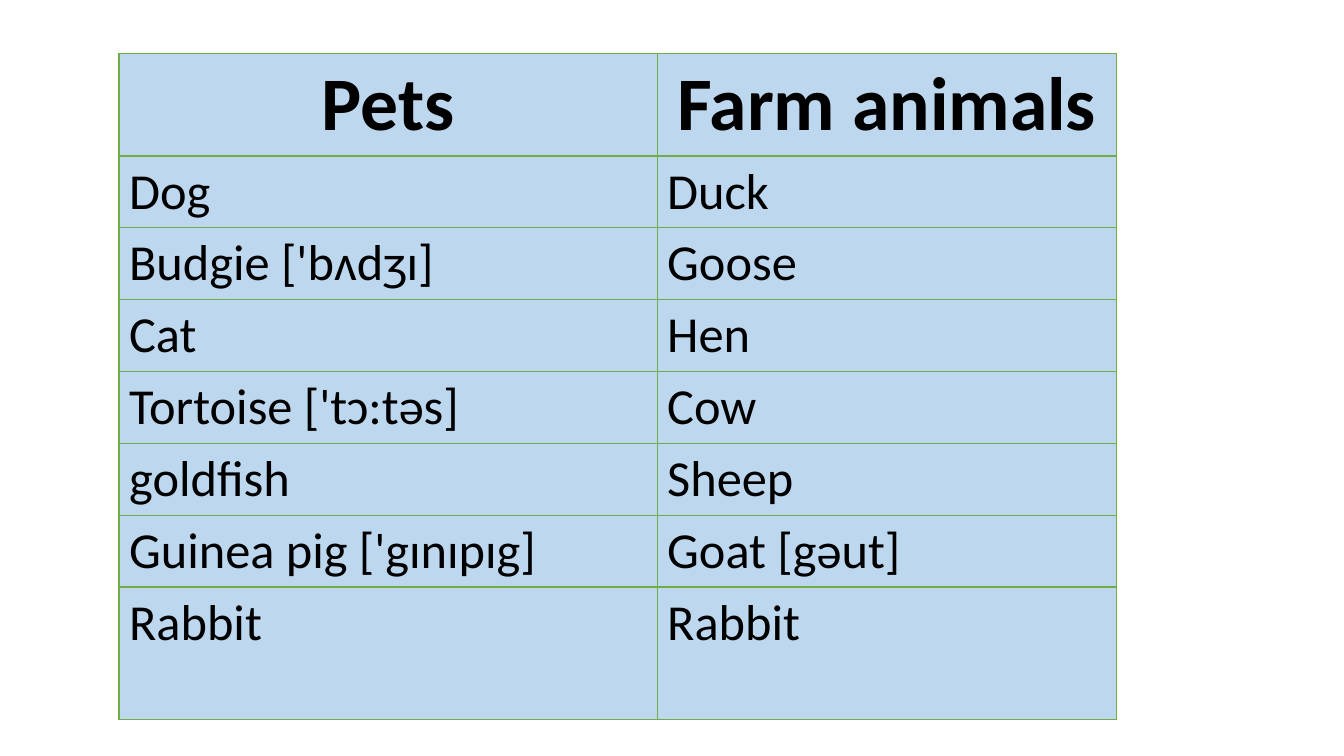
from lxml import etree
from pptx import Presentation
from pptx.dml.color import RGBColor
from pptx.enum.text import PP_ALIGN
from pptx.oxml.ns import qn
from pptx.util import Cm, Pt

LEFT, CENTER = PP_ALIGN.LEFT, PP_ALIGN.CENTER
BLACK = RGBColor(0x00, 0x00, 0x00)
PALE_BLUE = RGBColor(0xBD, 0xD7, 0xEE)
GREEN = RGBColor(0x70, 0xAD, 0x47)

HEADINGS = ("Pets", "Farm animals")
ANIMALS = [
    ("Dog", "Duck"),
    ("Budgie ['bʌdʒɪ]", "Goose"),
    ("Cat", "Hen"),
    ("Tortoise ['tɔ:təs]", "Cow"),
    ("goldfish", "Sheep"),
    ("Guinea pig ['gɪnɪpɪg]", "Goat [gəut]"),
    ("Rabbit", "Rabbit"),
]
COLUMN_WIDTHS = (13.56, 11.58)
HEADING_HEIGHT, ANIMAL_HEIGHT, LAST_HEIGHT = 2.58, 1.81, 3.35


def write(frame, text, *, size, bold=False, align=LEFT, font="Calibri", color=BLACK):
    paragraph = frame.paragraphs[0]
    paragraph.alignment = align
    run = paragraph.add_run()
    run.text = text
    run.font.name = font
    run.font.size = Pt(size)
    run.font.bold = bold
    run.font.color.rgb = color


class VocabularySlide:
    """Holds the slide and the table style."""

    def __init__(self, slide, fill=PALE_BLUE, border=GREEN, border_width=1):
        self.slide = slide
        self.fill = fill
        self.border = border
        self.border_width = border_width

    def style_cell(self, cell):
        # Borders come before the fill in the cell properties
        properties = cell._tc.get_or_add_tcPr()
        for side in ("a:lnL", "a:lnR", "a:lnT", "a:lnB"):
            line = etree.SubElement(properties, qn(side), w=str(Pt(self.border_width)))
            solid = etree.SubElement(line, qn("a:solidFill"))
            etree.SubElement(solid, qn("a:srgbClr"), val=str(self.border))
        cell.fill.solid()
        cell.fill.fore_color.rgb = self.fill

    def table(self, left, top, widths, heights, rows):
        table = self.slide.shapes.add_table(
            len(rows), len(widths), Cm(left), Cm(top), Cm(sum(widths)), Cm(sum(heights))
        ).table
        for column, width in zip(table.columns, widths):
            column.width = Cm(width)
        for row, height, words in zip(table.rows, heights, rows):
            row.height = Cm(height)
            heading = words is HEADINGS
            for cell, word in zip(row.cells, words):
                self.style_cell(cell)
                write(cell.text_frame, word, size=54 if heading else 36,
                      bold=heading, align=CENTER if heading else LEFT)


def main():
    presentation = Presentation()
    presentation.slide_width = Cm(33.87)
    presentation.slide_height = Cm(19.05)
    blank = presentation.slide_layouts[6]
    vocabulary = VocabularySlide(presentation.slides.add_slide(blank))

    # Animals sorted into pets and farm animals
    heights = [HEADING_HEIGHT] + [ANIMAL_HEIGHT] * (len(ANIMALS) - 1) + [LAST_HEIGHT]
    vocabulary.table(3, 1.35, COLUMN_WIDTHS, heights, [HEADINGS] + ANIMALS)

    presentation.save("out.pptx")


if __name__ == "__main__":
    main()
